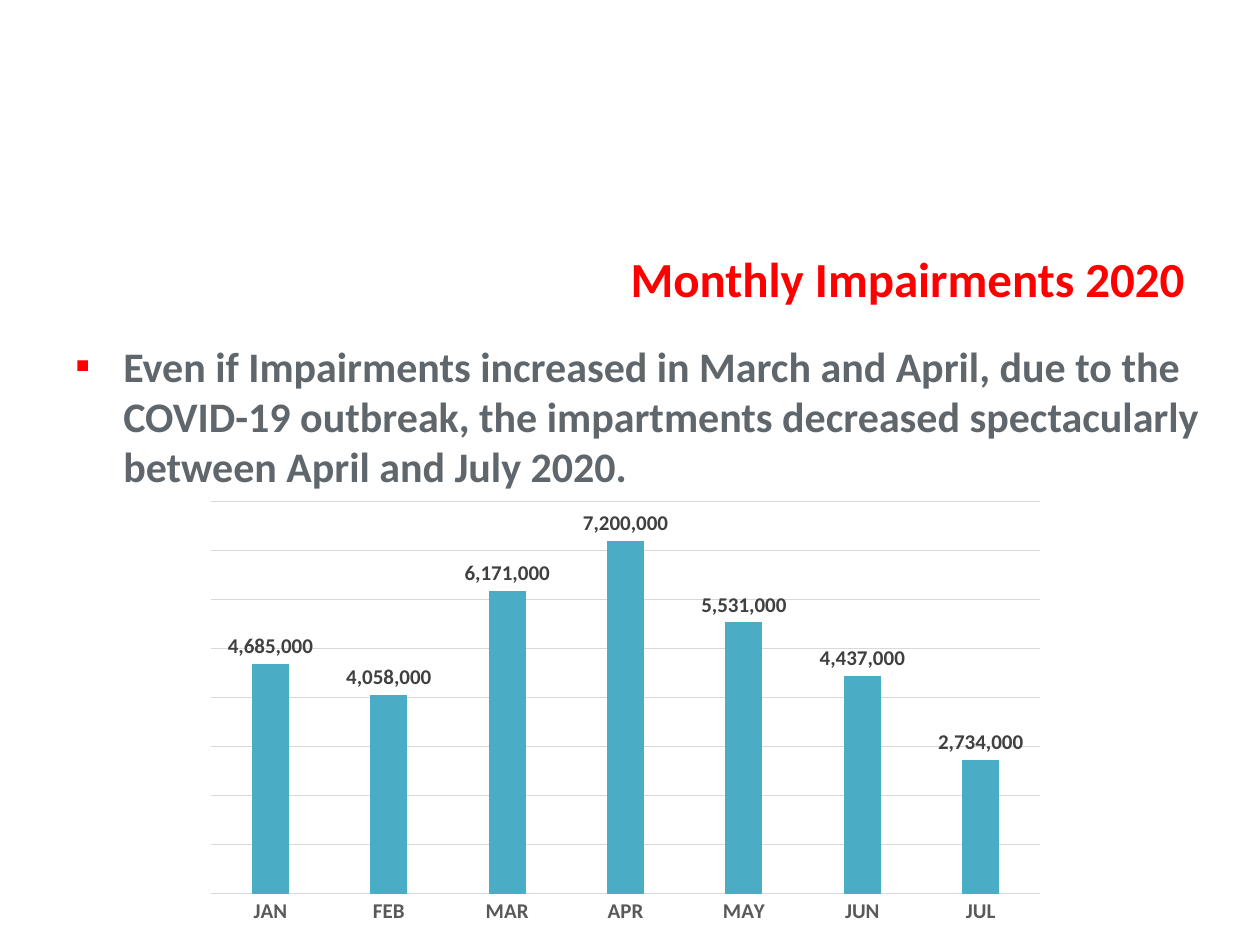
from dataclasses import dataclass

from lxml import etree
from pptx import Presentation
from pptx.chart.data import CategoryChartData
from pptx.dml.color import RGBColor
from pptx.enum.chart import XL_CHART_TYPE as ChartType
from pptx.enum.chart import XL_LABEL_POSITION as LabelPosition
from pptx.enum.chart import XL_TICK_MARK as TickMark
from pptx.enum.text import MSO_ANCHOR as Anchor
from pptx.enum.text import PP_ALIGN as Align
from pptx.oxml.ns import qn
from pptx.util import Inches, Pt


@dataclass(frozen=True)
class Theme:
    font: str = "Calibri"
    accent: str = "FF0000"
    body: str = "5F666C"
    bar: str = "4BACC6"
    grid: str = "D9D9D9"
    axis_text: str = "595959"
    label_text: str = "404040"
    title_size: int = 28
    body_size: int = 24
    chart_size: int = 12


THEME = Theme()
IMPAIRMENTS = {
    "JAN": 4685000, "FEB": 4058000, "MAR": 6171000, "APR": 7200000,
    "MAY": 5531000, "JUN": 4437000, "JUL": 2734000,
}
NUMBER_FORMAT = "#,##0"


def style_font(font, size, color):
    font.name = THEME.font
    font.size = Pt(size)
    font.bold = True
    font.color.rgb = RGBColor.from_string(color)


def style_line(line):
    line.color.rgb = RGBColor.from_string(THEME.grid)
    line.width = Pt(0.75)


def add_text(slide, box, text, size, color):
    frame = slide.shapes.add_textbox(*map(Inches, box)).text_frame
    frame.word_wrap = True
    paragraph = frame.paragraphs[0]
    paragraph.text = text
    style_font(paragraph.runs[0].font, size, color)
    return frame


def add_title(slide, box):
    frame = add_text(slide, box, "Monthly Impairments 2020",
                     THEME.title_size, THEME.accent)
    frame.vertical_anchor = Anchor.MIDDLE
    frame.paragraphs[0].alignment = Align.RIGHT


def add_bullet(paragraph, symbol, color, indent):
    properties = paragraph._p.get_or_add_pPr()
    properties.set("marL", str(indent))
    properties.set("indent", str(-indent))
    bullet_color = etree.SubElement(properties, qn("a:buClr"))
    etree.SubElement(bullet_color, qn("a:srgbClr"), val=color)
    etree.SubElement(properties, qn("a:buFont"), typeface=THEME.font)
    etree.SubElement(properties, qn("a:buChar"), char=symbol)


def add_comment(slide, box):
    frame = add_text(
        slide, box,
        "Even if Impairments increased in March and April, due to the "
        "COVID-19 outbreak, the impartments decreased spectacularly "
        "between April and July 2020.",
        THEME.body_size, THEME.body)
    add_bullet(frame.paragraphs[0], "▪", THEME.accent, Inches(0.38))


def add_impairment_chart(slide, box):
    data = CategoryChartData(number_format=NUMBER_FORMAT)
    data.categories = list(IMPAIRMENTS)
    data.add_series("Series 1", list(IMPAIRMENTS.values()))
    chart = slide.shapes.add_chart(
        ChartType.COLUMN_CLUSTERED, *map(Inches, box), data).chart
    chart.has_title = False
    chart.has_legend = False
    style_font(chart.font, THEME.chart_size, THEME.axis_text)

    months = chart.category_axis
    months.major_tick_mark = TickMark.NONE
    style_font(months.tick_labels.font, THEME.chart_size, THEME.axis_text)
    style_line(months.format.line)

    amounts = chart.value_axis
    amounts.visible = False
    amounts.minimum_scale = 0
    amounts.maximum_scale = 8000000
    amounts.major_unit = 1000000
    style_line(amounts.major_gridlines.format.line)

    plot = chart.plots[0]
    plot.gap_width = 219
    plot.overlap = -27
    plot.vary_by_categories = False
    bars = plot.series[0].format.fill
    bars.solid()
    bars.fore_color.rgb = RGBColor.from_string(THEME.bar)

    plot.has_data_labels = True
    labels = plot.data_labels
    labels.show_value = True
    labels.position = LabelPosition.OUTSIDE_END
    labels.number_format = NUMBER_FORMAT
    labels.number_format_is_linked = False
    style_font(labels.font, THEME.chart_size, THEME.label_text)


def main():
    deck = Presentation()
    deck.slide_width = Inches(10)
    deck.slide_height = Inches(7.5)
    slide = deck.slides.add_slide(deck.slide_layouts[6])
    add_title(slide, (0.5, 1.93, 9, 0.56))
    add_comment(slide, (0.5, 2.65, 9.31, 4.57))
    add_impairment_chart(slide, (1.54, 3.91, 6.85, 3.49))
    deck.save("out.pptx")


if __name__ == "__main__":
    main()
